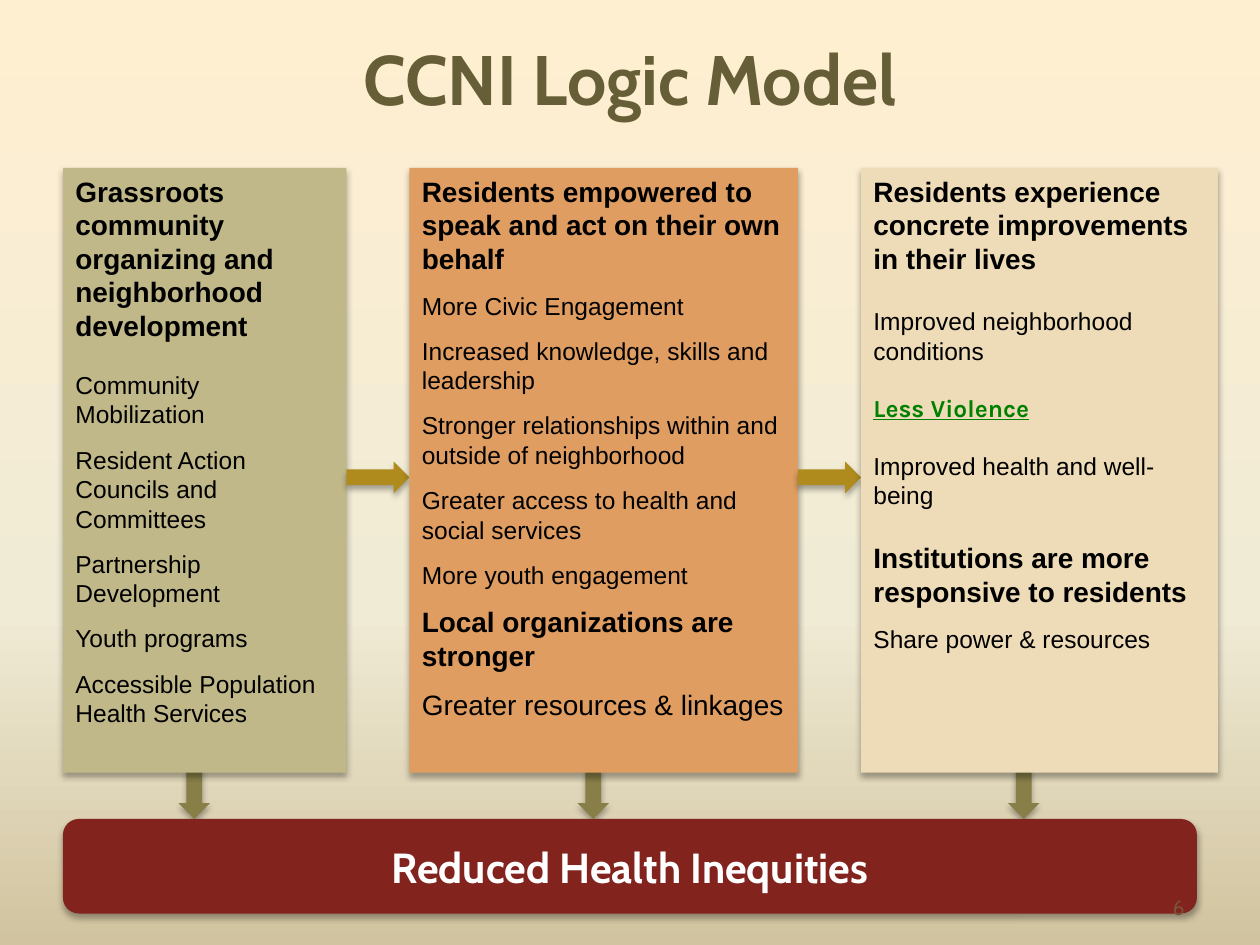
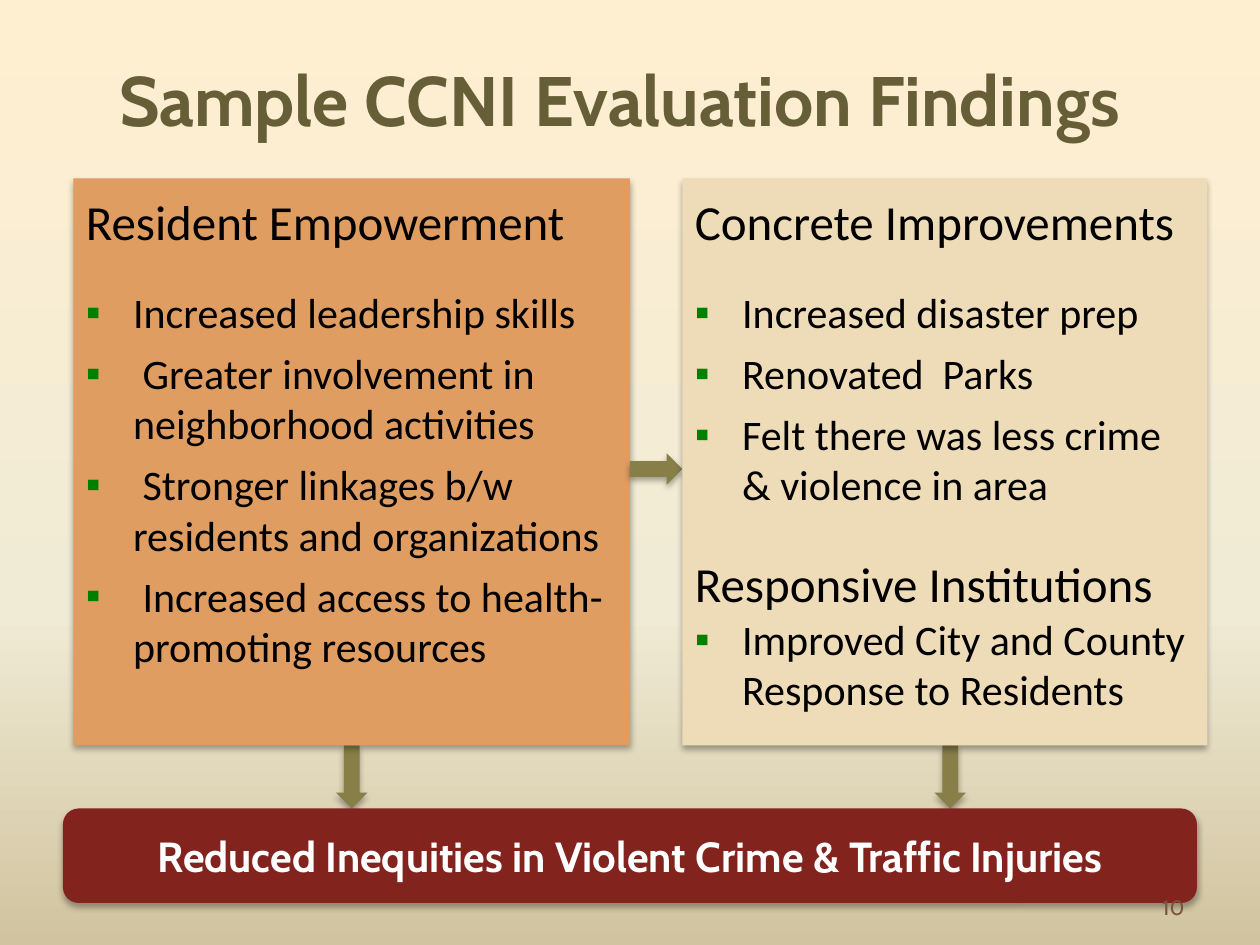
import collections
import copy

import lxml.etree
import pptx
import pptx.dml.color
import pptx.enum.shapes
import pptx.enum.text
import pptx.oxml.ns
import pptx.util

Pt = pptx.util.Pt
RGBColor = pptx.dml.color.RGBColor
Shape = pptx.enum.shapes.MSO_SHAPE
Align = pptx.enum.text.PP_ALIGN
Anchor = pptx.enum.text.MSO_ANCHOR
qn = pptx.oxml.ns.qn

CREAM = RGBColor(0xFF, 0xEF, 0xD1)
IVORY = RGBColor(0xF0, 0xEB, 0xD5)
KHAKI = RGBColor(0xD1, 0xC3, 0x9F)
OLIVE = RGBColor(0x65, 0x5E, 0x36)
MOSS = RGBColor(0x87, 0x7E, 0x48)
GOLD = RGBColor(0xAF, 0x8B, 0x1E)
SAGE = RGBColor(0xC0, 0xB8, 0x88)
ORANGE = RGBColor(0xDF, 0x9D, 0x62)
SAND = RGBColor(0xEE, 0xDB, 0xB7)
MAROON = RGBColor(0x82, 0x23, 0x1D)
BROWN = RGBColor(0x79, 0x53, 0x39)
GREEN = RGBColor(0x00, 0x80, 0x00)
BLACK = RGBColor(0, 0, 0)
WHITE = RGBColor(0xFF, 0xFF, 0xFF)

Style = collections.namedtuple(
    "Style", "font size color bold line bullet",
    defaults=(BLACK, False, False, False))
TITLE = Style("Cabin", 40, OLIVE, True)
GOAL = Style("Cabin", 24, WHITE, True)
NUMBER = Style("Cabin", 12, BROWN)
HEAD = Style("Arial", 16, bold=True)
ITEM = Style("Arial", 14)
LARGE = Style("Arial", 16)
LINK = Style("Karla", 14, GREEN, True, True)
TOPIC = Style("Calibri", 28)
POINT = Style("Calibri", 24, bullet=True)

# Each column: width, fill, lines; each line: text, style, space after
MODEL = [
    (162, SAGE, [
        ("Grassroots community organizing and neighborhood development", HEAD, 16),
        ("Community Mobilization", ITEM, 9),
        ("Resident Action Councils and Committees", ITEM, 9),
        ("Partnership Development", ITEM, 9),
        ("Youth programs", ITEM, 9),
        ("Accessible Population Health Services", ITEM, 9)]),
    (222, ORANGE, [
        ("Residents empowered to speak and act on their own behalf", HEAD, 9),
        ("More Civic Engagement", ITEM, 9),
        ("Increased knowledge, skills and leadership", ITEM, 9),
        ("Stronger relationships within and outside of neighborhood", ITEM, 9),
        ("Greater access to health and social services", ITEM, 9),
        ("More youth engagement", ITEM, 9),
        ("Local organizations are stronger", HEAD, 9),
        ("Greater resources & linkages", LARGE, 0)]),
    (204, SAND, [
        ("Residents experience concrete improvements in their lives", HEAD, 18),
        ("Improved neighborhood conditions", ITEM, 16),
        ("Less Violence", LINK, 16),
        ("Improved health and well-being", ITEM, 18),
        ("Institutions are more responsive to residents", HEAD, 9),
        ("Share power & resources", ITEM, 0)]),
]
FINDINGS = [
    (318, ORANGE, [
        ("Resident Empowerment", TOPIC, 21),
        ("Increased leadership skills", POINT, 6),
        (" Greater involvement in neighborhood activities", POINT, 6),
        (" Stronger linkages b/w residents and organizations", POINT, 6),
        (" Increased access to health-promoting resources", POINT, 6)]),
    (300, SAND, [
        ("Concrete Improvements", TOPIC, 21),
        ("Increased disaster prep", POINT, 6),
        ("Renovated  Parks", POINT, 6),
        ("Felt there was less crime & violence in area", POINT, 25),
        ("Responsive Institutions", TOPIC, 1),
        ("Improved City and County Response to Residents", POINT, 6)]),
]


def add_sub(parent, tag, **attrs):
    return lxml.etree.SubElement(parent, qn(tag), attrs)


def paint_back(master):
    fill = master.background.fill
    fill.gradient()
    fill.gradient_angle = 270
    stops = master.element.xpath(".//p:bg//a:gsLst")[0]
    stops.append(copy.deepcopy(stops[0]))
    for stop, place, color in zip(
            fill.gradient_stops, (0, 0.65, 1), (CREAM, IVORY, KHAKI)):
        stop.position = place
        stop.color.rgb = color


def add_shade(shape):
    """Give the shape a soft shadow straight below it."""
    shape.shadow.inherit = False
    effects = shape.element.spPr.find(qn("a:effectLst"))
    shade = add_sub(effects, "a:outerShdw", blurRad=str(Pt(3.5)),
                    dist=str(Pt(2.2)), dir="5400000", rotWithShape="0")
    color = add_sub(shade, "a:srgbClr", val="000000")
    add_sub(color, "a:alpha", val="32000")


def add_form(slide, kind, box, fill):
    shape = slide.shapes.add_shape(kind, *map(Pt, box))
    shape.fill.solid()
    shape.fill.fore_color.rgb = fill
    shape.line.fill.background()
    add_shade(shape)
    return shape


def add_mark(para):
    """Put a green square bullet before the paragraph."""
    props = para._p.get_or_add_pPr()
    props.set("marL", str(Pt(27)))
    props.set("indent", str(-Pt(27)))
    color = add_sub(props, "a:buClr")
    add_sub(color, "a:srgbClr", val=str(GREEN))
    add_sub(props, "a:buFont", typeface="Arial")
    add_sub(props, "a:buChar", char="▪")


def write(shape, lines, align=Align.LEFT, anchor=Anchor.TOP):
    frame = shape.text_frame
    frame.text = "\n".join(text for text, style, after in lines)
    frame.word_wrap = True
    frame.auto_size = pptx.enum.text.MSO_AUTO_SIZE.NONE
    frame.vertical_anchor = anchor
    for para, (text, style, after) in zip(frame.paragraphs, lines):
        para.alignment = align
        para.space_before = Pt(0)
        para.space_after = Pt(after)
        if style.bullet:
            add_mark(para)
        font = para.runs[0].font
        font.name = style.font
        font.size = Pt(style.size)
        font.bold = style.bold
        font.underline = style.line
        font.color.rgb = style.color


def start(deck, title, box):
    slide = deck.slides.add_slide(deck.slide_layouts.get_by_name("Title Only"))
    head = slide.shapes.title
    head.left, head.top, head.width, head.height = map(Pt, box)
    write(head, [(title, TITLE, 0)], Align.CENTER, Anchor.BOTTOM)
    return slide


def add_drops(slide, lefts, top, height):
    for left in lefts:
        add_form(slide, Shape.DOWN_ARROW, (left, top, 18, height), MOSS)


def add_chain(slide, columns, left, top, height, gap, pad, tint):
    """Lay text columns side by side with an arrow in each gap."""
    for index, (width, fill, lines) in enumerate(columns):
        if index:
            arrow = (left - gap, top + height / 2 - 5, gap, 18)
            add_form(slide, Shape.RIGHT_ARROW, arrow, tint)
        panel = add_form(slide, Shape.RECTANGLE, (left, top, width, height), fill)
        panel.text_frame.margin_top = Pt(pad)
        write(panel, lines)
        left += width + gap


def finish(slide, goal, top, number):
    bar = add_form(slide, Shape.ROUNDED_RECTANGLE, (36, top, 648, 54), MAROON)
    write(bar, [(goal, GOAL, 0)], Align.CENTER, Anchor.MIDDLE)
    note = slide.shapes.add_textbox(*map(Pt, (516, 492, 168, 37)))
    write(note, [(number, NUMBER, 0)], Align.RIGHT, Anchor.BOTTOM)


def main():
    deck = pptx.Presentation()
    deck.slide_width, deck.slide_height = Pt(720), Pt(540)
    paint_back(deck.slide_master)

    slide = start(deck, "CCNI Logic Model", (36, 0, 648, 72))
    add_drops(slide, (102, 330, 576), 438, 30)
    add_chain(slide, MODEL, 36, 96, 345.6, 36, 3.6, GOLD)
    finish(slide, "Reduced Health Inequities", 468, "6")

    slide = start(deck, "Sample CCNI Evaluation Findings", (30, 18, 648, 66))
    add_drops(slide, (192, 534), 426, 36)
    add_chain(slide, FINDINGS, 42, 102, 324, 30, 7.2, MOSS)
    finish(slide, "Reduced Inequities in Violent Crime & Traffic Injuries", 462, "10")

    deck.save("out.pptx")


if __name__ == "__main__":
    main()
